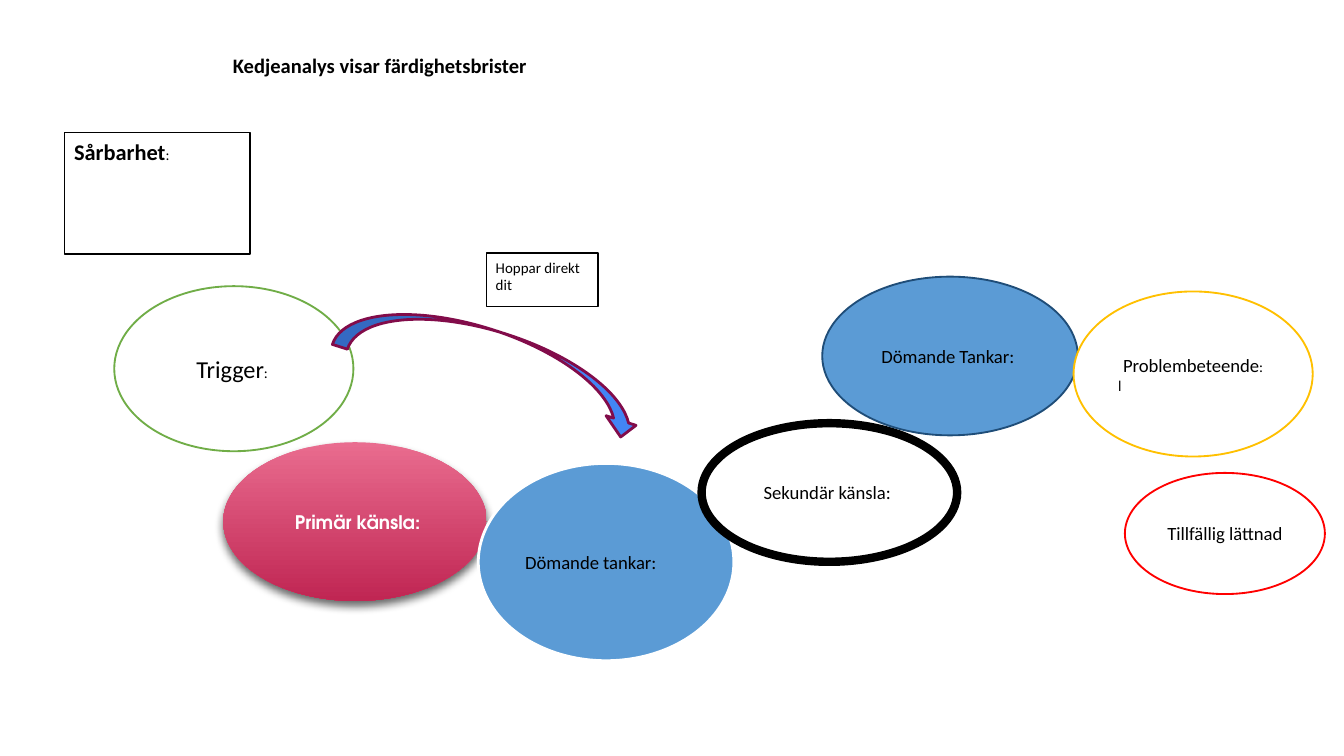
from lxml import etree
from pptx import Presentation
from pptx.dml.color import RGBColor
from pptx.enum import shapes, text
from pptx.oxml.ns import qn
from pptx.util import Cm, Pt

KIND = shapes.MSO_SHAPE
BOX, OVAL, ARROW = KIND.RECTANGLE, KIND.OVAL, KIND.CURVED_DOWN_ARROW
TOP, MID = text.MSO_ANCHOR.TOP, text.MSO_ANCHOR.MIDDLE
LEFT, CENTER = text.PP_ALIGN.LEFT, text.PP_ALIGN.CENTER
WHITE, BLACK, BLUE = "FFFFFF", "000000", "5B9BD5"
SANS, ROUND = "Calibri", "TeX Gyre Adventor"

TITLE = [(LEFT, [("Kedjeanalys visar färdighetsbrister", 11, True)])]
PARTS = [
    (BOX, (1.22, 2.51, 3.51, 2.29), WHITE, (BLACK, 0.75),
     [(LEFT, [("Sårbarhet", 12, True), (":", 8, False)])]),
    (OVAL, (2.16, 5.41, 4.52, 3.12), WHITE, ("70AD47", 1),
     [(CENTER, [("Trigger", 13, False), (": ", 8, False)])]),
    (OVAL, (4.22, 8.36, 4.98, 3), ("E96C8F", "C02653"), None,
     [(CENTER, [(" Primär känsla:", 10, True)])]),
    (OVAL, (9.04, 8.76, 4.83, 3.73), BLUE, (WHITE, 1.5),
     [(LEFT, [("Dömande tankar:", 10, False)])]),
    (OVAL, (13.26, 8, 4.83, 2.62), WHITE, (BLACK, 4.5),
     [(CENTER, [("Sekundär känsla: ", 10, False)])]),
    (OVAL, (15.54, 5.23, 4.83, 3), BLUE, ("1F4D78", 1),
     [(CENTER, [("Dömande Tankar: ", 10, False)])]),
    (OVAL, (20.29, 5.51, 4.52, 3.12), WHITE, ("FFC000", 1),
     [(CENTER, [("Problembeteende", 10, False), (":", 8, False)]),
      (LEFT, [("l", 8, False)])]),
    (OVAL, (21.26, 8.94, 3.78, 2.29), WHITE, ("FF0000", 1),
     [(CENTER, [("Tillfällig lättnad", 10, False)])]),
    (ARROW, (6.32, 6.27, 6.02, 1.19), "4285F4", ("820C4A", 1.5), []),
    (BOX, (9.19, 4.78, 2.11, 1.02), WHITE, (BLACK, 0.75),
     [(LEFT, [("Hoppar direkt dit", 8, False)])]),
]


def color(code):
    return RGBColor.from_string(code)


def write(shape, paras, anchor, font=SANS, tint=BLACK):
    frame = shape.text_frame
    frame.word_wrap = True
    frame.auto_size = text.MSO_AUTO_SIZE.NONE
    frame.vertical_anchor = anchor
    frame.margin_left = frame.margin_right = Cm(0.18)
    frame.margin_top = frame.margin_bottom = Cm(0.1)
    for i, (align, runs) in enumerate(paras):
        para = frame.add_paragraph() if i else frame.paragraphs[0]
        para.alignment = align
        para.line_spacing = 1.0
        para.space_before = Pt(0)
        for words, size, bold in runs:
            run = para.add_run()
            run.text = words
            run.font.name = font
            run.font.size = Pt(size)
            run.font.bold = bold
            run.font.color.rgb = color(tint)


def blend(shape, codes):
    shape.fill.gradient()
    shape.fill.gradient_angle = 270
    for stop, code in zip(shape.fill.gradient_stops, codes):
        stop.color.rgb = color(code)


def shade(shape):
    effects = shape._element.spPr.find(qn("a:effectLst"))
    outer = etree.SubElement(effects, qn("a:outerShdw"), blurRad=str(Pt(5)),
                             dist=str(Pt(3)), dir="5400000", rotWithShape="0")
    tone = etree.SubElement(outer, qn("a:srgbClr"), val=BLACK)
    etree.SubElement(tone, qn("a:alpha"), val="60000")


def draw(slide, kind, place, fill, line, paras):
    shape = slide.shapes.add_shape(kind, *map(Cm, place))
    shape.shadow.inherit = False
    glossy = isinstance(fill, tuple)
    if glossy:
        blend(shape, fill)
        shade(shape)
    else:
        shape.fill.solid()
        shape.fill.fore_color.rgb = color(fill)
    if line:
        shape.line.color.rgb = color(line[0])
        shape.line.width = Pt(line[1])
    else:
        shape.line.fill.background()
    if kind == ARROW:
        shape.rotation = 17.8
        for i, value in enumerate((0.25, 0.5, 0.25)):
            shape.adjustments[i] = value
    if paras:
        anchor = MID if kind == OVAL else TOP
        look = (ROUND, WHITE) if glossy else (SANS, BLACK)
        write(shape, paras, anchor, *look)


def main():
    deck = Presentation()
    deck.slide_width, deck.slide_height = Cm(25.4), Cm(14.29)
    slide = deck.slides.add_slide(deck.slide_layouts[5])
    title = slide.shapes.title
    title.left, title.top = Cm(4.22), Cm(0.91)
    title.width, title.height = Cm(25.4), Cm(1.27)
    write(title, TITLE, TOP)
    for part in PARTS:
        draw(slide, *part)
    deck.save("out.pptx")


if __name__ == "__main__":
    main()
